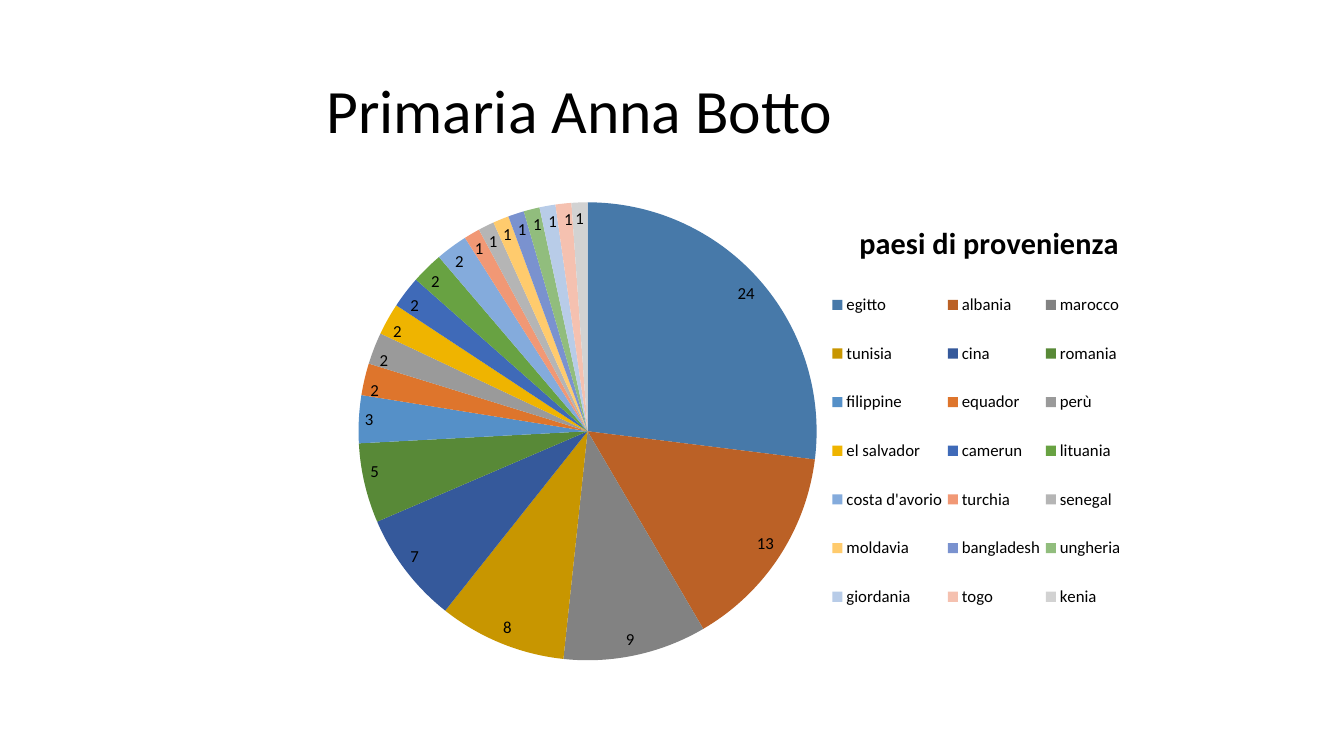
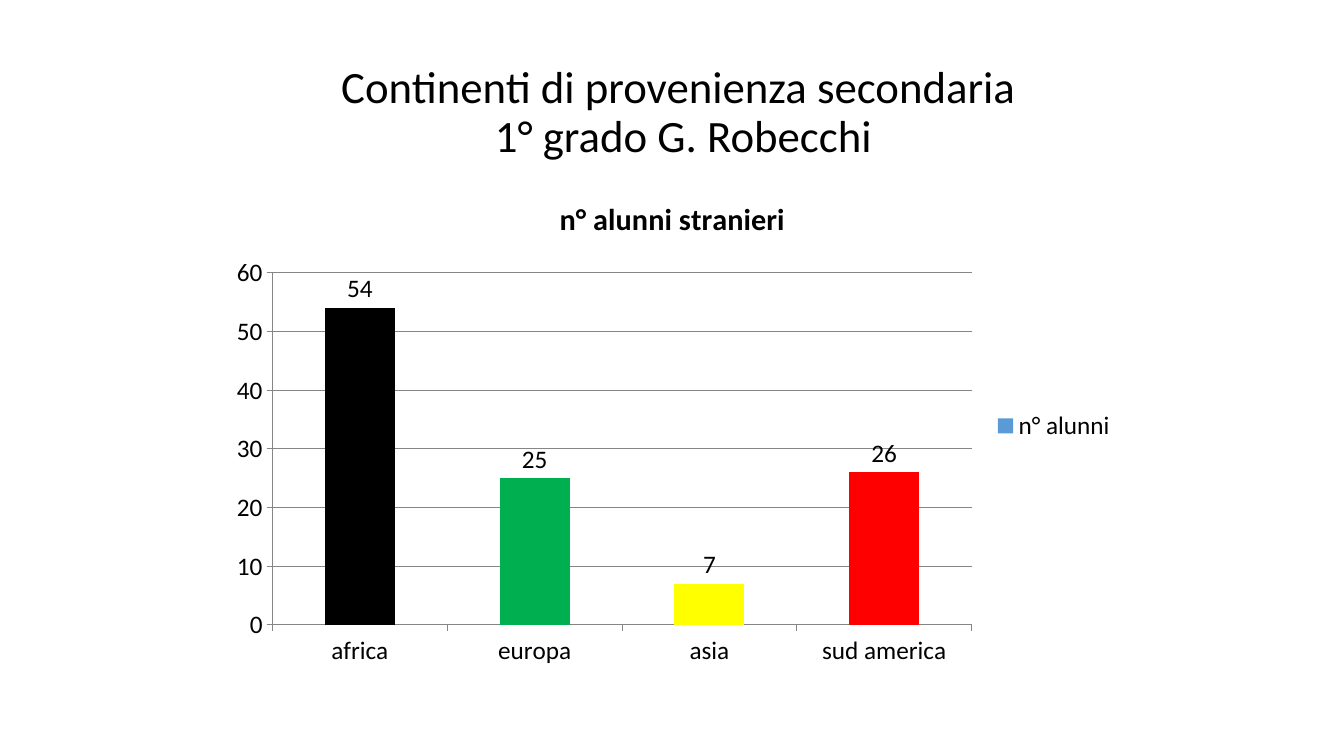
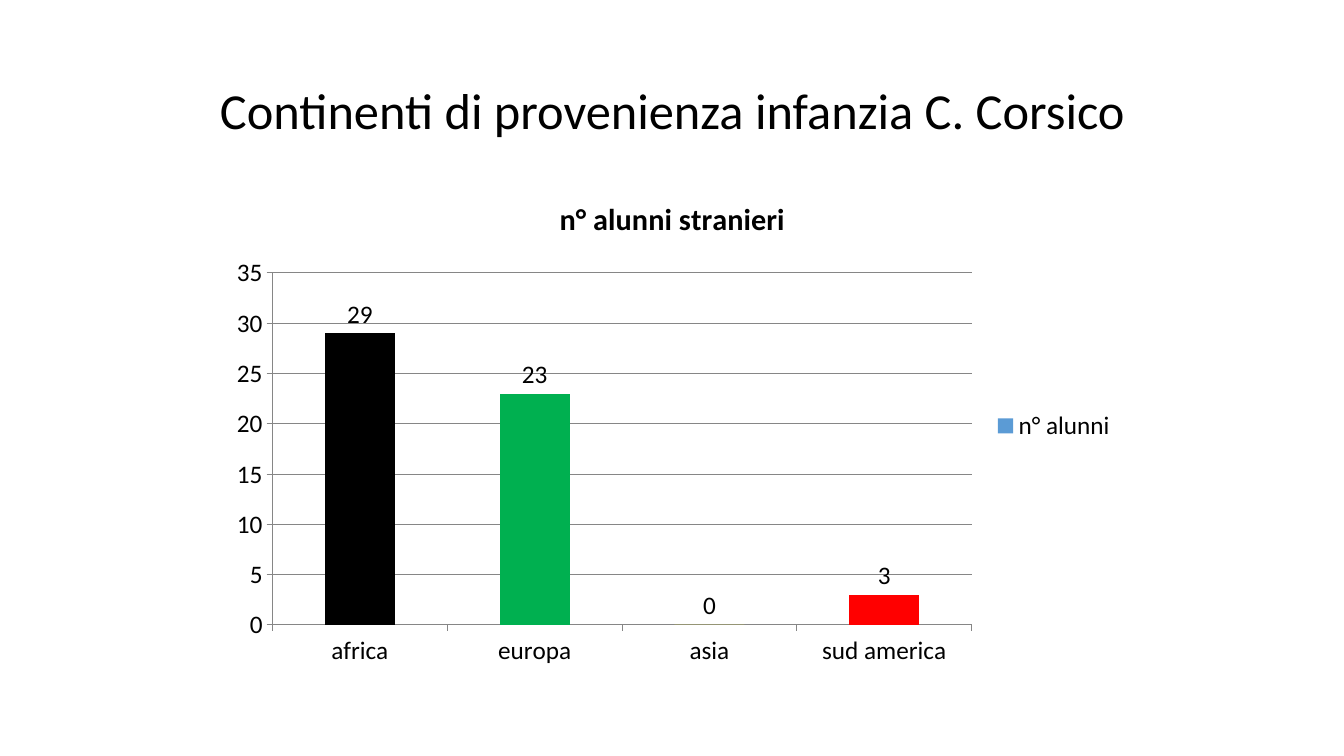
from pptx import Presentation
from pptx.chart.data import CategoryChartData
from pptx.dml.color import RGBColor
from pptx.enum.chart import XL_CHART_TYPE, XL_LABEL_POSITION, XL_LEGEND_POSITION, XL_TICK_MARK
from pptx.enum.text import MSO_ANCHOR, PP_ALIGN
from pptx.oxml import parse_xml
from pptx.oxml.ns import nsdecls
from pptx.util import Inches, Pt

PIE, COLUMN = XL_CHART_TYPE.PIE, XL_CHART_TYPE.COLUMN_CLUSTERED
IN_END, OUT_END = XL_LABEL_POSITION.INSIDE_END, XL_LABEL_POSITION.OUTSIDE_END
RIGHT, OUT = XL_LEGEND_POSITION.RIGHT, XL_TICK_MARK.OUTSIDE
CENTER, MIDDLE = PP_ALIGN.CENTER, MSO_ANCHOR.MIDDLE

FONT = "Calibri"
COLORS = {
    "text": "000000", "grid": "868686", "bar": "5B9BD5",
    "africa": "000000", "europa": "00B050", "asia": "FFFF00", "sud america": "FF0000",
    "egitto": "4779A9", "albania": "BB6126", "marocco": "828282",
    "tunisia": "C89600", "cina": "35599B", "romania": "588937",
    "filippine": "5590C8", "equador": "DE752C", "perù": "9A9A9A",
    "el salvador": "EFB400", "camerun": "3F6AB8", "lituania": "68A242",
    "costa d'avorio": "84ABDC", "turchia": "F19875", "senegal": "B5B5B5",
    "moldavia": "FFCB6D", "bangladesh": "7A92CF", "ungheria": "91BD7D",
    "giordania": "B8CCE8", "togo": "F5C1B0", "kenia": "D2D2D2",
}
STATES = {
    "egitto": 24, "albania": 13, "marocco": 9, "tunisia": 8, "cina": 7,
    "romania": 5, "filippine": 3, "equador": 2, "perù": 2, "el salvador": 2,
    "camerun": 2, "lituania": 2, "costa d'avorio": 2, "turchia": 1,
    "senegal": 1, "moldavia": 1, "bangladesh": 1, "ungheria": 1,
    "giordania": 1, "togo": 1, "kenia": 1,
}
LANDS = ["africa", "europa", "asia", "sud america"]
PUPILS = "n° alunni"
SLIDES = [
    ("Primaria Anna Botto", 44, 0, PIE,
     "paesi di provenienza", "paesi di provenienza", STATES),
    ("Continenti di provenienza secondaria \v1° grado G. Robecchi", 32, 1.03, COLUMN,
     "n° alunni stranieri", PUPILS, dict(zip(LANDS, [54, 25, 7, 26]))),
    ("Continenti di provenienza infanzia C. Corsico", 36, 0.92, COLUMN,
     "n° alunni stranieri", PUPILS, dict(zip(LANDS, [29, 23, 0, 3]))),
]


def style(font, size, bold=False):
    font.name = FONT
    font.size = Pt(size)
    font.bold = bold
    font.color.rgb = RGBColor.from_string(COLORS["text"])


def place(part, index, inner=False, **box):
    for old in part.xpath("c:layout"):
        part.remove(old)
    target = '<c:layoutTarget val="inner"/>' if inner else ""
    modes = "".join(f'<c:{key}Mode val="edge"/>' for key in "xy")
    sides = "".join(f'<c:{key} val="{val}"/>' for key, val in box.items())
    part.insert(index, parse_xml(
        f'<c:layout {nsdecls("c")}><c:manualLayout>{target}{modes}{sides}'
        "</c:manualLayout></c:layout>"))


deck = Presentation()
deck.slide_width = Inches(13.33)
deck.slide_height = Inches(7.5)

for head, size, left, kind, label, name, counts in SLIDES:
    slide = deck.slides.add_slide(deck.slide_layouts[5])
    title = slide.shapes.title
    title.left, title.top = Inches(left), Inches(0.4)
    title.width, title.height = Inches(11.5), Inches(1.45)
    frame = title.text_frame
    frame.text = head
    frame.word_wrap = True
    frame.vertical_anchor = MIDDLE
    para = frame.paragraphs[0]
    para.alignment = CENTER
    para.line_spacing = 0.9
    for run in para.runs:
        style(run.font, size)

    data = CategoryChartData()
    data.categories = list(counts)
    data.add_series(name, list(counts.values()))
    chart = slide.shapes.add_chart(
        kind, Inches(2.17), Inches(1.75), Inches(9), Inches(4.95), data).chart
    style(chart.font, 18)
    chart.has_title = True
    caption = chart.chart_title
    caption.text_frame.text = label
    caption.include_in_layout = False
    style(caption.text_frame.paragraphs[0].runs[0].font, 21.6, True)
    chart.has_legend = True
    legend = chart.legend
    legend.position = RIGHT
    legend.include_in_layout = False

    plot = chart.plots[0]
    plot.vary_by_categories = kind == PIE
    plot.has_data_labels = True
    labels = plot.data_labels
    labels.show_value = True
    labels.show_percentage = False
    labels.position = IN_END if kind == PIE else OUT_END
    style(labels.font, 12 if kind == PIE else 18)
    series = plot.series[0]

    if kind == PIE:
        style(legend.font, 12)
        area = chart.element.xpath("c:chart/c:plotArea")[0]
        key = chart.element.xpath("c:chart/c:legend")[0]
        place(area, 0, True, x=0.154, y=0.052, w=0.505, h=0.918)
        place(caption.element if hasattr(caption, "element")
              else chart.element.xpath("c:chart/c:title")[0], 1, x=0.7, y=0.08)
        place(key, 1, x=0.67, y=0.18, w=0.33, h=0.74)
    else:
        plot.gap_width = 150
        series.format.fill.solid()
        series.format.fill.fore_color.rgb = RGBColor.from_string(COLORS["bar"])
        series.invert_if_negative = False
        value = chart.value_axis
        value.has_major_gridlines = True
        for axis in (chart.category_axis, value):
            axis.major_tick_mark = OUT
            axis.tick_labels.number_format = "General"
            style(axis.tick_labels.font, 18)
        for item in (chart.category_axis, value, value.major_gridlines):
            item.format.line.color.rgb = RGBColor.from_string(COLORS["grid"])
            item.format.line.width = Pt(0.75)

    for index, land in enumerate(counts):
        fill = series.points[index].format.fill
        fill.solid()
        fill.fore_color.rgb = RGBColor.from_string(COLORS[land])

deck.save("out.pptx")
